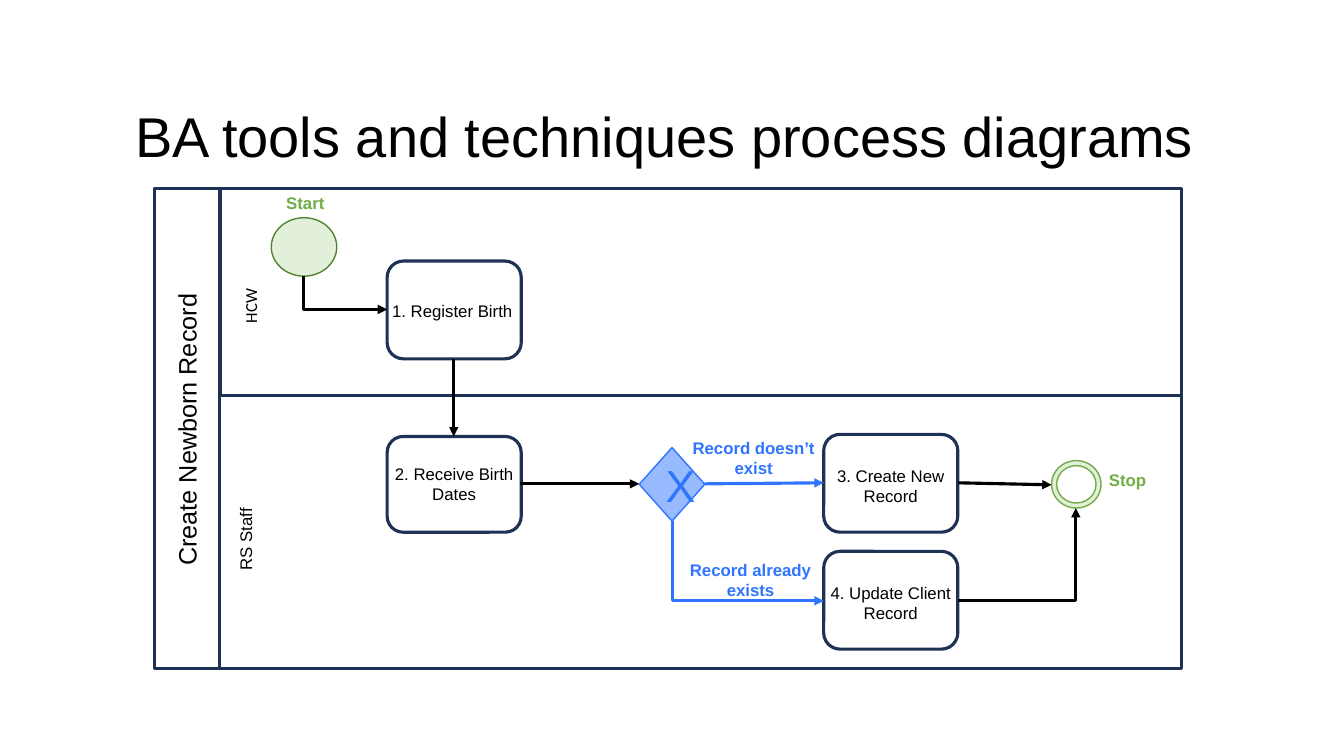
"""Build a swimlane process diagram slide for creating a newborn record."""
from pptx import Presentation
from pptx.dml.color import RGBColor
from pptx.enum.shapes import MSO_CONNECTOR, MSO_SHAPE
from pptx.enum.text import MSO_ANCHOR, MSO_AUTO_SIZE, PP_ALIGN
from pptx.oxml.ns import qn
from pptx.util import Inches, Pt
from lxml import etree

LEFT, CENTER = PP_ALIGN.LEFT, PP_ALIGN.CENTER
MIDDLE = MSO_ANCHOR.MIDDLE
FIT, FIXED = MSO_AUTO_SIZE.SHAPE_TO_FIT_TEXT, MSO_AUTO_SIZE.NONE
STRAIGHT = MSO_CONNECTOR.STRAIGHT
RECT, ROUNDED = MSO_SHAPE.RECTANGLE, MSO_SHAPE.ROUNDED_RECTANGLE
OVAL, DECISION, DONUT = MSO_SHAPE.OVAL, MSO_SHAPE.FLOWCHART_DECISION, MSO_SHAPE.DONUT

BLACK, NAVY, BLUE, LIGHT_BLUE = "000000", "1E3256", "3075FF", "98BAFF"
GREEN, DARK_GREEN, LIGHT_GREEN = "70AD47", "548235", "E2F0D9"

TITLE = "BA tools and techniques process diagrams"
TITLE_PLACE = (1.24, 0.66, 11.5, 1.45)

LANES = [
    (1.53, 1.87, 10.19, 4.76),
    (1.53, 1.87, 0.65, 4.76),
    (2.19, 1.87, 9.53, 2.05),
]
STEPS = [
    (3.84, 2.59, 1.33, 0.97),
    (3.84, 4.33, 1.33, 0.95),
    (8.17, 5.47, 1.33, 0.97),
    (8.17, 4.31, 1.33, 0.97),
]
START_PLACE = (2.69, 2.16, 0.65, 0.58)
GATEWAY_PLACE = (6.34, 4.44, 0.65, 0.73)
STOP_PLACE = (10.43, 4.57, 0.49, 0.47)

STRAIGHT_ARROWS = [
    ((4.5, 3.56), (4.5, 4.33), BLACK),
    ((5.16, 4.8), (6.34, 4.8), BLACK),
    ((6.99, 4.8), (8.17, 4.79), BLUE),
    ((9.5, 4.79), (10.43, 4.81), BLACK),
]
DOWN_THEN_RIGHT_ARROWS = [
    ((3.01, 2.74), (3.84, 3.07), BLACK),
    ((6.67, 5.17), (8.17, 5.96), BLUE),
]
RIGHT_THEN_UP_ARROW = ((9.5, 5.96), (10.67, 5.04), BLACK)

SIDE_LABELS = [
    ("Create Newborn Record", (0.39, 4.05, 2.92, 0.4), 18, "Arial"),
    ("RS Staff", (1.93, 5.1, 1.01, 0.3), 12, "Arial"),
    ("HCW", (2.19, 2.86, 0.59, 0.3), 12, "Calibri"),
]
LABELS = [
    ("1. Register Birth", (3.79, 2.93, 1.47, 0.3), LEFT, BLACK, False),
    ("2. Receive Birth Dates", (3.77, 4.55, 1.47, 0.5), CENTER, BLACK, False),
    ("Record doesn’t exist", (6.74, 4.29, 1.47, 0.5), CENTER, BLUE, True),
    ("Record already exists", (6.71, 5.5, 1.47, 0.5), CENTER, BLUE, True),
    ("3. Create New Record", (8.1, 4.57, 1.47, 0.5), CENTER, BLACK, False),
    ("4. Update Client Record", (8.1, 5.73, 1.47, 0.5), CENTER, BLACK, False),
    ("Start", (2.74, 1.86, 0.65, 0.3), LEFT, GREEN, True),
    ("Stop", (10.9, 4.61, 0.65, 0.3), LEFT, GREEN, True),
]


def color(value):
    return RGBColor.from_string(value)


def lengths(values):
    return [Inches(value) for value in values]


def write(box, text, size, ink, align=LEFT, **formats):
    frame = box.text_frame
    frame.word_wrap = True
    para = frame.paragraphs[0]
    para.alignment = align
    span = para.add_run()
    span.text = text
    span.font.color.rgb = color(ink)
    for name, value in {"size": Pt(size), "name": "Arial", **formats}.items():
        setattr(span.font, name, value)
    return frame


def add_title(page):
    title = page.shapes.title
    title.left, title.top, title.width, title.height = lengths(TITLE_PLACE)
    frame = write(title, TITLE, 40, BLACK)
    frame.auto_size = FIXED
    frame.vertical_anchor = MIDDLE
    frame.paragraphs[0].line_spacing = 0.9


def add_node(page, kind, place, outline=NAVY, width=2.25, fill=None):
    node = page.shapes.add_shape(kind, *lengths(place))
    node.shadow.inherit = False
    node.line.color.rgb = color(outline)
    node.line.width = Pt(width)
    if fill:
        node.fill.solid()
        node.fill.fore_color.rgb = color(fill)
    else:
        node.fill.background()
    return node


def add_arrow(page, start, end, ink, preset="line", turn=0):
    arrow = page.shapes.add_connector(STRAIGHT, *lengths(start + end))
    arrow.line.color.rgb = color(ink)
    arrow.line.width = Pt(2.25)
    properties = arrow._element.spPr
    properties.find(qn("a:prstGeom")).set("prst", preset)
    if turn:
        properties.find(qn("a:xfrm")).set("rot", str(turn * 60000))
    etree.SubElement(properties.find(qn("a:ln")), qn("a:tailEnd"), type="triangle")
    etree.SubElement(properties, qn("a:effectLst"))


def add_down_then_right(page, start, end, ink):
    middle_x, middle_y = (start[0] + end[0]) / 2, (start[1] + end[1]) / 2
    half_x, half_y = (end[0] - start[0]) / 2, (end[1] - start[1]) / 2
    turned_start = (middle_x + half_y, middle_y - half_x)
    turned_end = (middle_x - half_y, middle_y + half_x)
    add_arrow(page, turned_start, turned_end, ink, "bentConnector2", 270)


def add_label(page, text, place, size, ink, align=LEFT, turn=0, **formats):
    box = page.shapes.add_textbox(*lengths(place))
    box.rotation = turn
    write(box, text, size, ink, align, **formats).auto_size = FIT


def main():
    deck = Presentation()
    deck.slide_width, deck.slide_height = Inches(13.33), Inches(7.5)
    page = deck.slides.add_slide(deck.slide_layouts[5])
    add_title(page)

    for place in LANES:
        add_node(page, RECT, place)
    for place in STEPS:
        add_node(page, ROUNDED, place)
    add_node(page, OVAL, START_PLACE, DARK_GREEN, 1, LIGHT_GREEN)
    gateway = add_node(page, DECISION, GATEWAY_PLACE, BLUE, 1, LIGHT_BLUE)
    write(gateway, "X", 32, BLUE, CENTER).vertical_anchor = MIDDLE
    stop = add_node(page, DONUT, STOP_PLACE, GREEN, 1, LIGHT_GREEN)
    stop.adjustments[0] = 0.105

    for start, end, ink in STRAIGHT_ARROWS:
        add_arrow(page, start, end, ink)
    for start, end, ink in DOWN_THEN_RIGHT_ARROWS:
        add_down_then_right(page, start, end, ink)
    add_arrow(page, *RIGHT_THEN_UP_ARROW, preset="bentConnector2")

    for text, place, size, font in SIDE_LABELS:
        add_label(page, text, place, size, BLACK, turn=270, name=font)
    for text, place, align, ink, bold in LABELS:
        add_label(page, text, place, 12, ink, align, bold=bold)

    deck.save("out.pptx")


if __name__ == "__main__":
    main()
